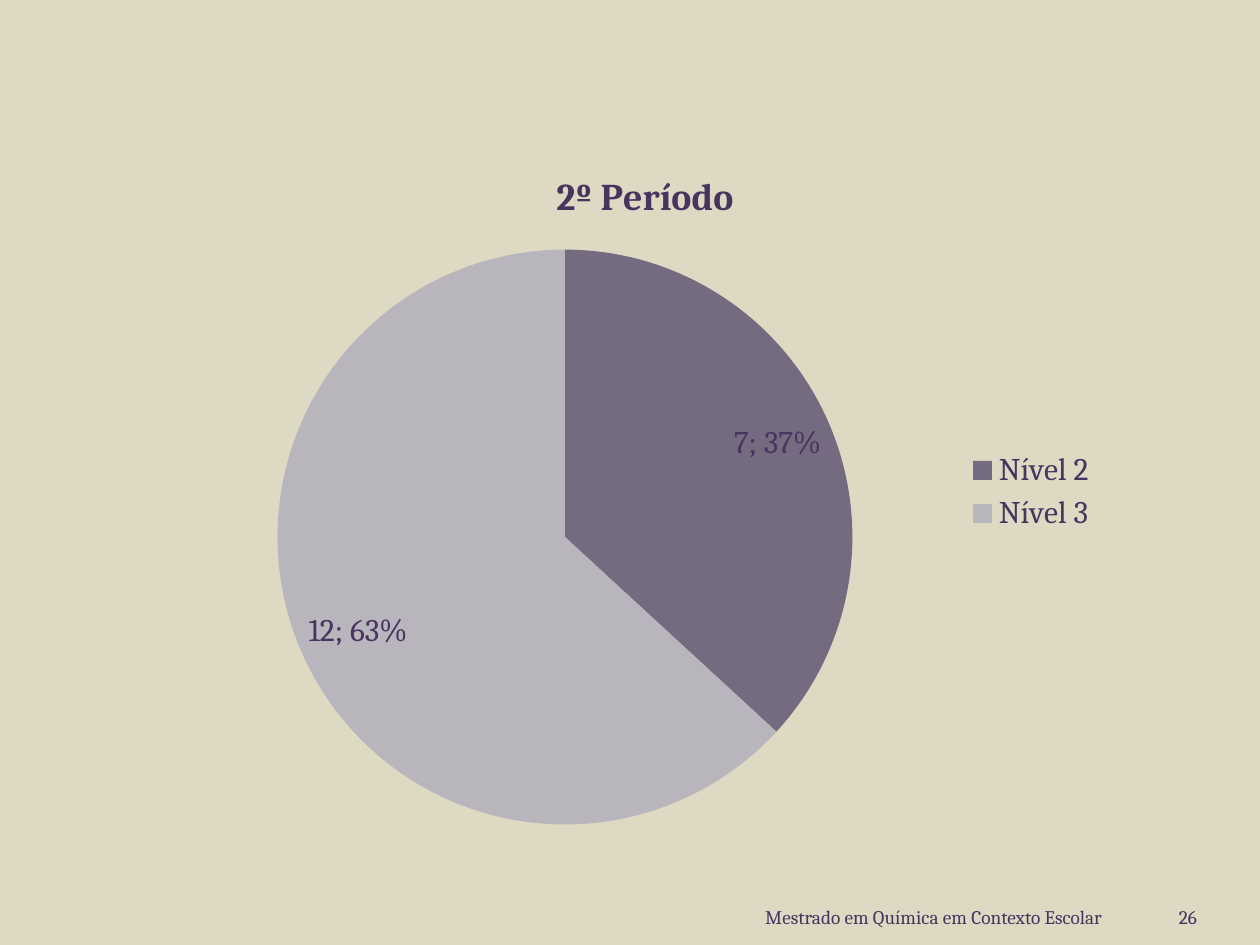
import pptx
import pptx.util
import pptx.chart.data
import pptx.dml.color
import pptx.enum.chart
import pptx.enum.text
import pptx.oxml

Inches = pptx.util.Inches
FONT = "Cambria"
INK = "49345F"
NS = 'xmlns:c="http://schemas.openxmlformats.org/drawingml/2006/chart"'


def color(code):
    """Turn a hex string into a colour."""
    return pptx.dml.color.RGBColor.from_string(code)


def style(font, size, bold=False):
    """Give a font the face, ink, size and weight."""
    font.name = FONT
    font.size = pptx.util.Pt(size)
    font.bold = bold
    font.color.rgb = color(INK)


def add_note(slide, text, left, top, width, height):
    """Place one right-aligned footer text in its box."""
    box = slide.shapes.add_textbox(Inches(left), Inches(top), Inches(width), Inches(height))
    frame = box.text_frame
    frame.word_wrap = True
    frame.margin_right = 0
    frame.vertical_anchor = pptx.enum.text.MSO_ANCHOR.MIDDLE
    frame.text = text
    line = frame.paragraphs[0]
    line.alignment = pptx.enum.text.PP_ALIGN.RIGHT
    style(line.runs[0].font, 11)


def add_foot(slide, left, top, width, height):
    """Place the course name and the page number in the footer box."""
    page = 0.67
    add_note(slide, "Mestrado em Química em Contexto Escolar", left, top, 4, height)
    add_note(slide, "26", left + width - page, top, page, height)


def set_labels(plot):
    """Show value and percentage inside the edge of each slice."""
    plot.has_data_labels = True
    labels = plot.data_labels
    labels.show_value = True
    labels.show_percentage = True
    labels.position = pptx.enum.chart.XL_LABEL_POSITION.INSIDE_END
    style(labels.font, 18)
    mark = pptx.oxml.parse_xml(f"<c:separator {NS}>; </c:separator>")
    labels._element.find("{*}showBubbleSize").addnext(mark)


def set_layout(chart, left, top, width, height):
    """Fix the pie area as fractions of the chart."""
    area = chart._chartSpace.chart.plotArea
    for old in area.findall("{*}layout"):
        area.remove(old)
    sizes = {"x": left, "y": top, "w": width, "h": height}
    parts = "".join(f'<c:{key} val="{val}"/>' for key, val in sizes.items())
    area.insert(0, pptx.oxml.parse_xml(
        f'<c:layout {NS}><c:manualLayout><c:layoutTarget val="inner"/>'
        f'<c:xMode val="edge"/><c:yMode val="edge"/>{parts}</c:manualLayout></c:layout>'))


def add_pie(slide, left, top, width, height):
    """Place the pie chart of levels in its box."""
    data = pptx.chart.data.CategoryChartData()
    data.categories = ["Nível 2 ", "Nível 3"]
    data.add_series("Series 1", [7, 12])
    chart = slide.shapes.add_chart(
        pptx.enum.chart.XL_CHART_TYPE.PIE, Inches(left), Inches(top),
        Inches(width), Inches(height), data).chart
    style(chart.font, 18)
    chart.has_title = True
    title = chart.chart_title.text_frame
    title.text = "2º Período"
    style(title.paragraphs[0].runs[0].font, 21.6, True)
    chart.has_legend = True
    chart.legend.position = pptx.enum.chart.XL_LEGEND_POSITION.RIGHT
    chart.legend.include_in_layout = False
    style(chart.legend.font, 18)
    plot = chart.plots[0]
    plot.vary_by_categories = True
    for index, code in enumerate(["756B80", "B9B5BD"]):
        fill = plot.series[0].points[index].format.fill
        fill.solid()
        fill.fore_color.rgb = color(code)
    set_labels(plot)
    set_layout(chart, 0.11, 0.15, 0.61, 0.83)


def main():
    """Build and save the slide."""
    deck = pptx.Presentation()
    deck.slide_width, deck.slide_height = Inches(10), Inches(7.5)
    slide = deck.slides.add_slide(deck.slide_layouts[6])
    back = slide.background.fill
    back.solid()
    back.fore_color.rgb = color("DDD9C3")
    add_foot(slide, 4.75, 7.15, 4.75, 0.25)
    add_pie(slide, 1.38, 1.15, 7.48, 5.51)
    deck.save("out.pptx")


if __name__ == "__main__":
    main()
